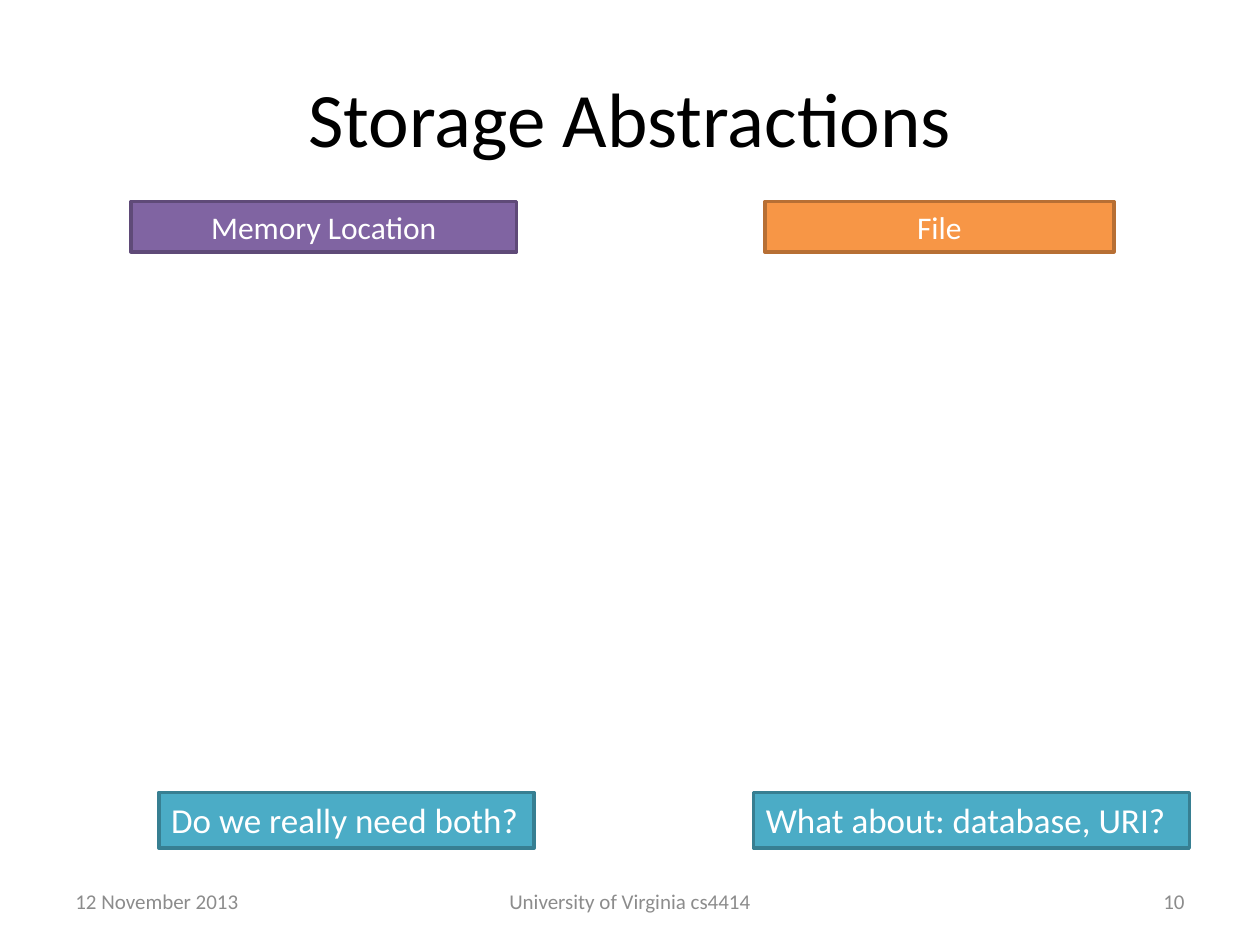
from dataclasses import dataclass

from pptx import Presentation
from pptx import util as u
from pptx.dml.color import RGBColor
from pptx.enum import shapes, text

W, H = 10, 7.5
LEFT, CENTER, RIGHT = text.PP_ALIGN.LEFT, text.PP_ALIGN.CENTER, text.PP_ALIGN.RIGHT


@dataclass(frozen=True)
class Theme:
    font: str = "Calibri"
    title_size: int = 44
    question_size: int = 20
    label_size: int = 18
    footer_size: int = 12
    black: str = "000000"
    white: str = "FFFFFF"
    gray: str = "8C8C8C"
    # Each pair is fill and outline
    purple: tuple = ("8064A2", "5F4A78")
    orange: tuple = ("F79646", "B76F34")
    teal: tuple = ("4BACC6", "377F92")


THEME = Theme()

# Slide grid: shared margin and rows, in inches
MARGIN = 0.05 * W
TITLE_ROW = (0.04 * H, H / 6)
LABEL_ROW = (1.6, 0.4)
QUESTION_ROW = (6.29, 0.44)
FOOTER_ROW = (6.95, 0.4)


def box(left, row, width):
    """Place a column span on a row given as (top, height)."""
    return [u.Inches(v) for v in (left, row[0], width, row[1])]


def write(sp, words, size, color, align, anchor=text.MSO_ANCHOR.MIDDLE, wrap=True):
    tf = sp.text_frame
    tf.text = words
    tf.word_wrap = wrap
    tf.vertical_anchor = anchor
    p = tf.paragraphs[0]
    p.alignment = align
    font = p.runs[0].font
    font.name, font.size = THEME.font, u.Pt(size)
    font.color.rgb = RGBColor.from_string(color)


def add_text(s, place, words, size, color, align):
    write(s.shapes.add_textbox(*place), words, size, color, align)


def add_box(s, place, words, size, colors, align, wrap):
    sp = s.shapes.add_shape(shapes.MSO_SHAPE.RECTANGLE, *place)
    sp.shadow.inherit = False
    fill, line = (RGBColor.from_string(c) for c in colors)
    sp.fill.solid()
    sp.fill.fore_color.rgb = fill
    sp.line.color.rgb = line
    sp.line.width = u.Pt(2)
    write(sp, words, size, THEME.white, align, text.MSO_ANCHOR.TOP, wrap)
    sp.text_frame.auto_size = text.MSO_AUTO_SIZE.SHAPE_TO_FIT_TEXT


def main():
    prs = Presentation()
    prs.slide_width, prs.slide_height = u.Inches(W), u.Inches(H)
    s = prs.slides.add_slide(prs.slide_layouts[6])

    # Title
    add_text(s, box(MARGIN, TITLE_ROW, W - 2 * MARGIN), "Storage Abstractions",
             THEME.title_size, THEME.black, CENTER)

    # Footer: date, course and slide number
    side, middle = 2.33, 3.17
    for left, width, words, align in (
        (MARGIN, side, "12 November 2013", LEFT),
        ((W - middle) / 2, middle, "University of Virginia cs4414", CENTER),
        (W - MARGIN - side, side, "10", RIGHT),
    ):
        add_text(s, box(left, FOOTER_ROW, width), words,
                 THEME.footer_size, THEME.gray, align)

    # The two abstractions
    for left, width, words, colors in (
        (1.04, 3.06, "Memory Location", THEME.purple),
        (6.07, 2.77, "File", THEME.orange),
    ):
        add_box(s, box(left, LABEL_ROW, width), words,
                THEME.label_size, colors, CENTER, True)

    # Questions
    for left, width, words in (
        (5.98, 3.46, "What about: database, URI?"),
        (1.26, 2.98, "Do we really need both?"),
    ):
        add_box(s, box(left, QUESTION_ROW, width), words,
                THEME.question_size, THEME.teal, LEFT, False)

    prs.save("out.pptx")


if __name__ == "__main__":
    main()
